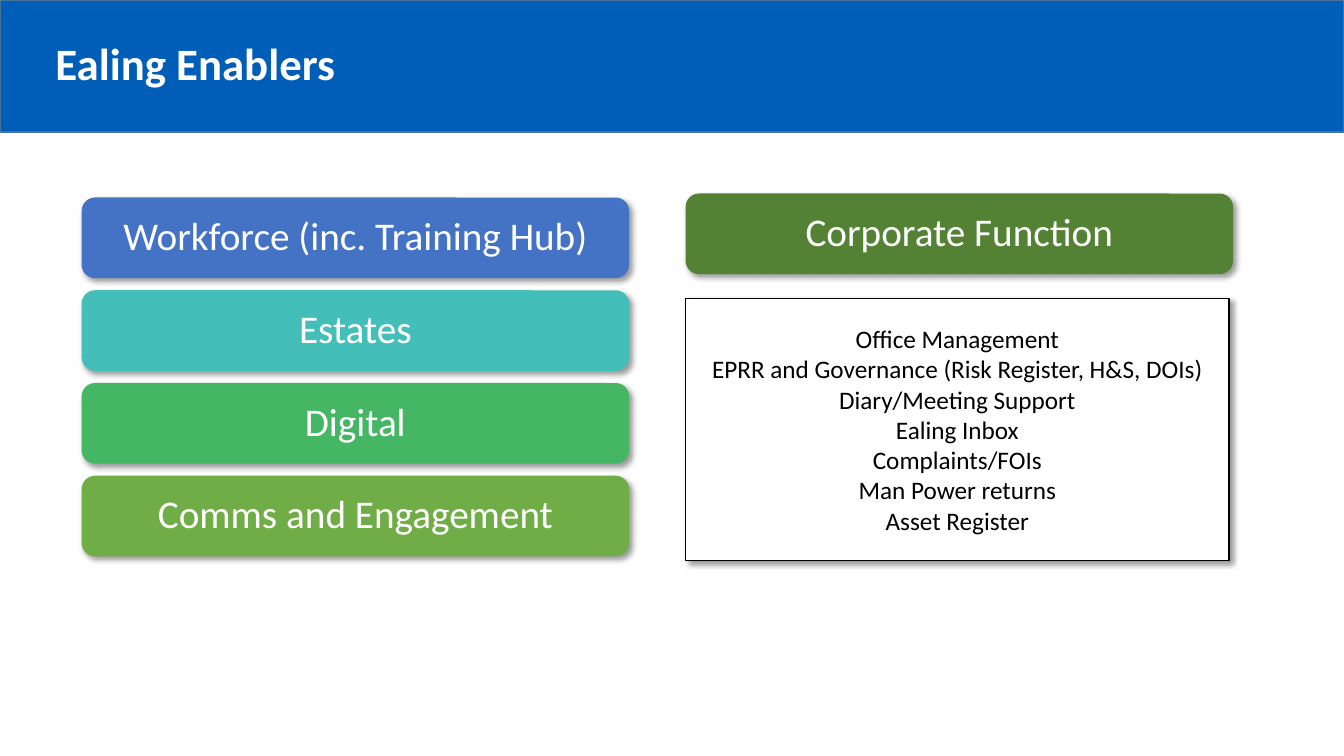
"""Build the Ealing Enablers slide."""
from dataclasses import dataclass

from lxml import etree
from pptx import Presentation
from pptx.dml.color import RGBColor
from pptx.enum.shapes import MSO_SHAPE
from pptx.enum.text import MSO_ANCHOR, PP_ALIGN
from pptx.oxml import parse_xml
from pptx.util import Inches, Pt

RECT, ROUNDED = MSO_SHAPE.RECTANGLE, MSO_SHAPE.ROUNDED_RECTANGLE
MIDDLE = MSO_ANCHOR.MIDDLE
LEFT, CENTER = PP_ALIGN.LEFT, PP_ALIGN.CENTER

WHITE = RGBColor(0xFF, 0xFF, 0xFF)
BLACK = RGBColor(0x00, 0x00, 0x00)
BAND_BLUE = RGBColor(0x00, 0x5E, 0xB8)
BAND_EDGE = RGBColor(0x43, 0x73, 0x9E)
BLUE = RGBColor(0x44, 0x72, 0xC4)
TEAL = RGBColor(0x43, 0xBE, 0xB9)
GREEN = RGBColor(0x45, 0xB6, 0x64)
LIGHT_GREEN = RGBColor(0x70, 0xAD, 0x47)
DARK_GREEN = RGBColor(0x54, 0x82, 0x35)

FONT = "Calibri"
BUTTON_W, BUTTON_H, BUTTON_PITCH = 5.43, 0.8, 0.92
LEFT_X, LEFT_Y, RIGHT_X = 0.81, 1.96, 6.8

SHADOW_XML = (
    '<a:effectLst xmlns:a="http://schemas.openxmlformats.org/drawingml/2006/main">'
    '<a:outerShdw blurRad="50800" dist="38100" dir="2700000" algn="tl" rotWithShape="0">'
    '<a:srgbClr val="000000"><a:alpha val="40000"/></a:srgbClr>'
    '</a:outerShdw></a:effectLst>'
)


@dataclass
class Box:
    x: float
    y: float
    w: float
    h: float
    fill: RGBColor
    lines: tuple[str, ...] = ()
    kind: MSO_SHAPE = ROUNDED
    size: int = 28
    color: RGBColor = WHITE
    spacing: float = 0.9
    edge: RGBColor | None = None
    shadow: bool = True


def write_lines(tf, lines: tuple[str, ...], size: int, color: RGBColor,
                spacing: float, align: PP_ALIGN, bold: bool = False) -> None:
    tf.word_wrap = True
    tf.vertical_anchor = MIDDLE
    for i, line in enumerate(lines):
        p = tf.paragraphs[0] if i == 0 else tf.add_paragraph()
        p.text = line
        p.alignment = align
        p.line_spacing = spacing
        p.font.name = FONT
        p.font.size = Pt(size)
        p.font.bold = bold
        p.font.color.rgb = color


def add_box(s, box: Box):
    sp = s.shapes.add_shape(box.kind, Inches(box.x), Inches(box.y),
                            Inches(box.w), Inches(box.h))
    sp.fill.solid()
    sp.fill.fore_color.rgb = box.fill
    if box.edge is None:
        sp.line.fill.background()
    else:
        sp.line.color.rgb = box.edge
        sp.line.width = Pt(1)
    if box.shadow:
        sp._element.spPr.append(parse_xml(etree.fromstring(SHADOW_XML) is not None and SHADOW_XML))
    else:
        sp.shadow.inherit = False
    write_lines(sp.text_frame, box.lines, box.size, box.color, box.spacing, CENTER)
    return sp


def add_title(s, text: str) -> None:
    title = s.shapes.title
    title.left, title.top = Inches(0.45), Inches(0.36)
    title.width, title.height = Inches(12.44), Inches(0.59)
    write_lines(title.text_frame, (text,), 32, WHITE, 0.9, LEFT, bold=True)


def main() -> None:
    prs = Presentation()
    prs.slide_width, prs.slide_height = Inches(13.33), Inches(7.5)
    s = prs.slides.add_slide(prs.slide_layouts[5])

    band = add_box(s, Box(0, 0, 13.33, 1.31, BAND_BLUE, kind=RECT,
                          edge=BAND_EDGE, shadow=False))
    add_title(s, "Ealing Enablers")
    s.shapes.title._element.addprevious(band._element)

    enablers = (
        ("Workforce (inc. Training Hub)", BLUE),
        ("Estates", TEAL),
        ("Digital", GREEN),
        ("Comms and Engagement", LIGHT_GREEN),
    )
    for i, (label, fill) in enumerate(enablers):
        add_box(s, Box(LEFT_X, LEFT_Y + i * BUTTON_PITCH, BUTTON_W, BUTTON_H,
                       fill, (label,)))

    add_box(s, Box(RIGHT_X, 1.92, BUTTON_W, BUTTON_H, DARK_GREEN,
                   ("Corporate Function",)))
    duties = (
        "Office Management",
        "EPRR and Governance (Risk Register, H&S, DOIs)",
        "Diary/Meeting Support",
        "Ealing Inbox",
        "Complaints/FOIs",
        "Man Power returns",
        "Asset Register",
    )
    add_box(s, Box(RIGHT_X, 2.96, 5.39, 2.6, WHITE, duties, kind=RECT, size=18,
                   color=BLACK, spacing=1.0, edge=BLACK))

    prs.save("out.pptx")


if __name__ == "__main__":
    main()
